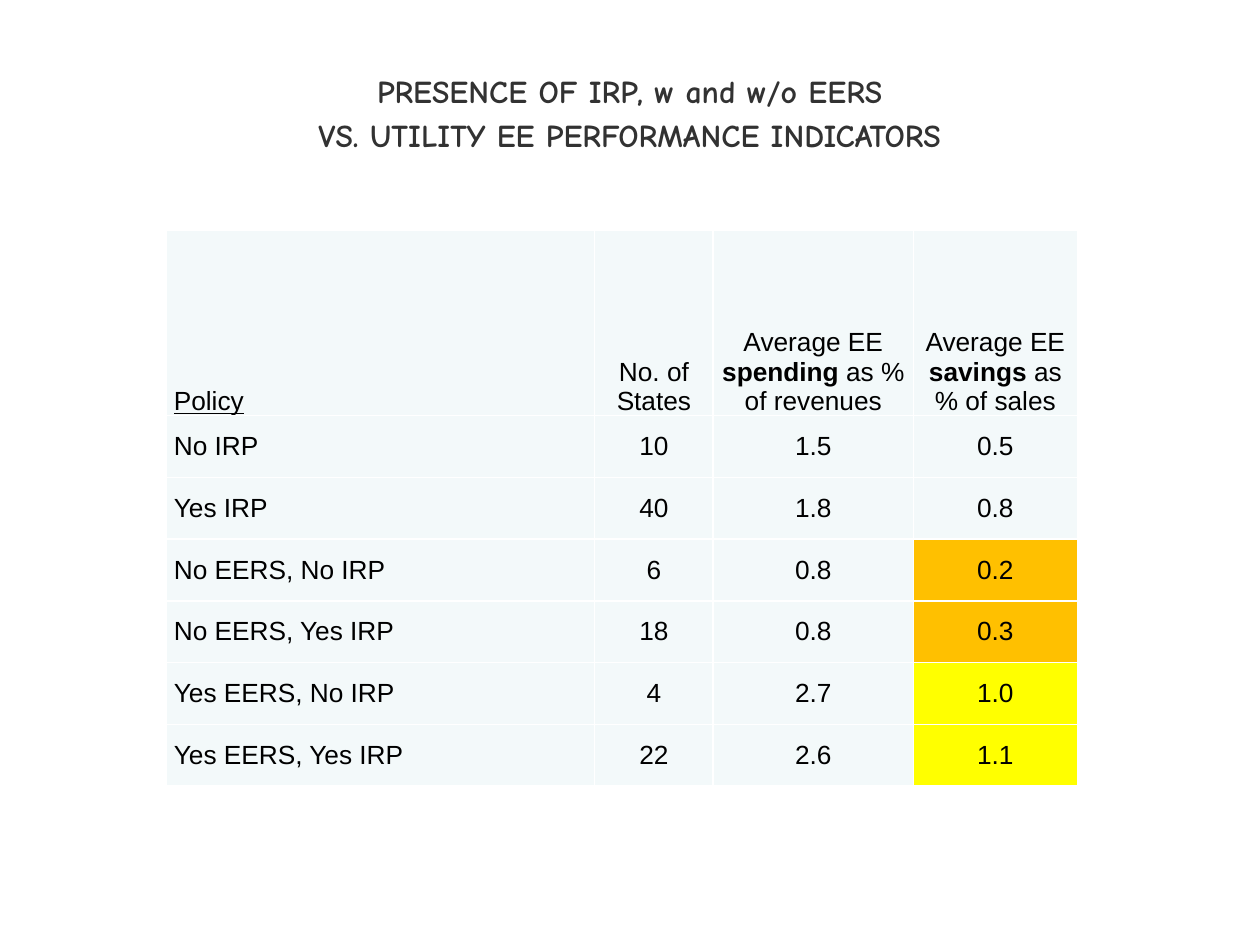
from lxml.etree import SubElement
from pptx import Presentation
from pptx.dml.color import RGBColor
from pptx.enum.text import MSO_ANCHOR, PP_ALIGN
from pptx.oxml.ns import qn
from pptx.util import Inches, Pt

WHITE = RGBColor(0xFF, 0xFF, 0xFF)
BLACK = RGBColor(0x00, 0x00, 0x00)
CHARCOAL = RGBColor(0x32, 0x32, 0x32)
PALE = RGBColor(0xF3, 0xF9, 0xFA)
ORANGE = RGBColor(0xFF, 0xC0, 0x00)
YELLOW = RGBColor(0xFF, 0xFF, 0x00)

TITLE_LINES = [
    "PRESENCE OF IRP, w and w/o EERS",
    "VS. UTILITY EE PERFORMANCE INDICATORS",
]
# Each heading is a list of (text, bold, underlined) runs.
HEADINGS = [
    [("Policy", False, True)],
    [("No. of States", False, False)],
    [("Average EE ", False, False), ("spending ", True, False),
     ("as % of revenues", False, False)],
    [("Average EE ", False, False), ("savings", True, False),
     (" as % of sales", False, False)],
]
# Policy, states, spending, savings, fill of the savings cell.
POLICIES = [
    ("No IRP", "10", "1.5", "0.5", PALE),
    ("Yes IRP", "40", "1.8", "0.8", PALE),
    ("No EERS, No IRP", "6", "0.8", "0.2", ORANGE),
    ("No EERS, Yes IRP", "18", "0.8", "0.3", ORANGE),
    ("Yes EERS, No IRP", "4", "2.7", "1.0", YELLOW),
    ("Yes EERS, Yes IRP", "22", "2.6", "1.1", YELLOW),
]
COLUMN_WIDTHS = [3.4, 0.94, 1.59, 1.3]
HEADER_HEIGHT = 1.47
ROW_HEIGHT = 0.49


def add_span(para, text, font_name, size, color, bold=False, underline=False):
    span = para.add_run()
    span.text = text
    font = span.font
    font.name, font.size = font_name, Pt(size)
    font.bold, font.underline = bold, underline
    font.color.rgb = color


def add_title(page, left, top, width, height):
    box = page.shapes.add_textbox(
        Inches(left), Inches(top), Inches(width), Inches(height))
    frame = box.text_frame
    frame.word_wrap = True
    frame.margin_top = Inches(0.07)
    for index, line in enumerate(TITLE_LINES):
        para = frame.add_paragraph() if index else frame.paragraphs[0]
        para.alignment = PP_ALIGN.CENTER
        if index:
            para.space_before = Pt(3.5)
        add_span(para, line, "Comic Neue", 18.2, CHARCOAL, bold=True)


def add_borders(cell):
    """Draw a thin white line on all four sides; call before setting the fill."""
    properties = cell._tc.get_or_add_tcPr()
    for side in ("a:lnL", "a:lnR", "a:lnT", "a:lnB"):
        line = SubElement(properties, qn(side), w=str(Pt(1)))
        fill = SubElement(line, qn("a:solidFill"))
        SubElement(fill, qn("a:srgbClr"), val=str(WHITE))


def fill_cell(cell, spans, fill, alignment, anchor):
    add_borders(cell)
    cell.fill.solid()
    cell.fill.fore_color.rgb = fill
    cell.vertical_anchor = anchor
    cell.margin_left = cell.margin_right = Inches(0.06)
    cell.margin_top = cell.margin_bottom = 0
    para = cell.text_frame.paragraphs[0]
    para.alignment = alignment
    for text, bold, underline in spans:
        add_span(para, text, "Arial", 15, BLACK, bold, underline)


def add_policy_table(page, left, top, width, height):
    table = page.shapes.add_table(
        len(POLICIES) + 1, len(HEADINGS),
        Inches(left), Inches(top), Inches(width), Inches(height)).table
    table.first_row = table.horz_banding = False
    for column, column_width in zip(table.columns, COLUMN_WIDTHS):
        column.width = Inches(column_width)
    for index, row in enumerate(table.rows):
        row.height = Inches(ROW_HEIGHT if index else HEADER_HEIGHT)

    alignments = [PP_ALIGN.LEFT] + [PP_ALIGN.CENTER] * (len(HEADINGS) - 1)
    for column, (spans, alignment) in enumerate(zip(HEADINGS, alignments)):
        fill_cell(table.cell(0, column), spans, PALE, alignment, MSO_ANCHOR.BOTTOM)
    for row, (*texts, savings_fill) in enumerate(POLICIES, start=1):
        fills = [PALE, PALE, PALE, savings_fill]
        for column, (text, fill) in enumerate(zip(texts, fills)):
            fill_cell(table.cell(row, column), [(text, False, False)],
                      fill, alignments[column], MSO_ANCHOR.MIDDLE)


def main():
    deck = Presentation()
    deck.slide_width, deck.slide_height = Inches(10), Inches(7.5)
    page = deck.slides.add_slide(deck.slide_layouts[6])
    page.background.fill.solid()
    page.background.fill.fore_color.rgb = WHITE
    add_title(page, 0.69, 0.5, 8.62, 1.08)
    add_policy_table(page, 1.32, 1.83, sum(COLUMN_WIDTHS),
                     HEADER_HEIGHT + ROW_HEIGHT * len(POLICIES))
    deck.save("out.pptx")


if __name__ == "__main__":
    main()
